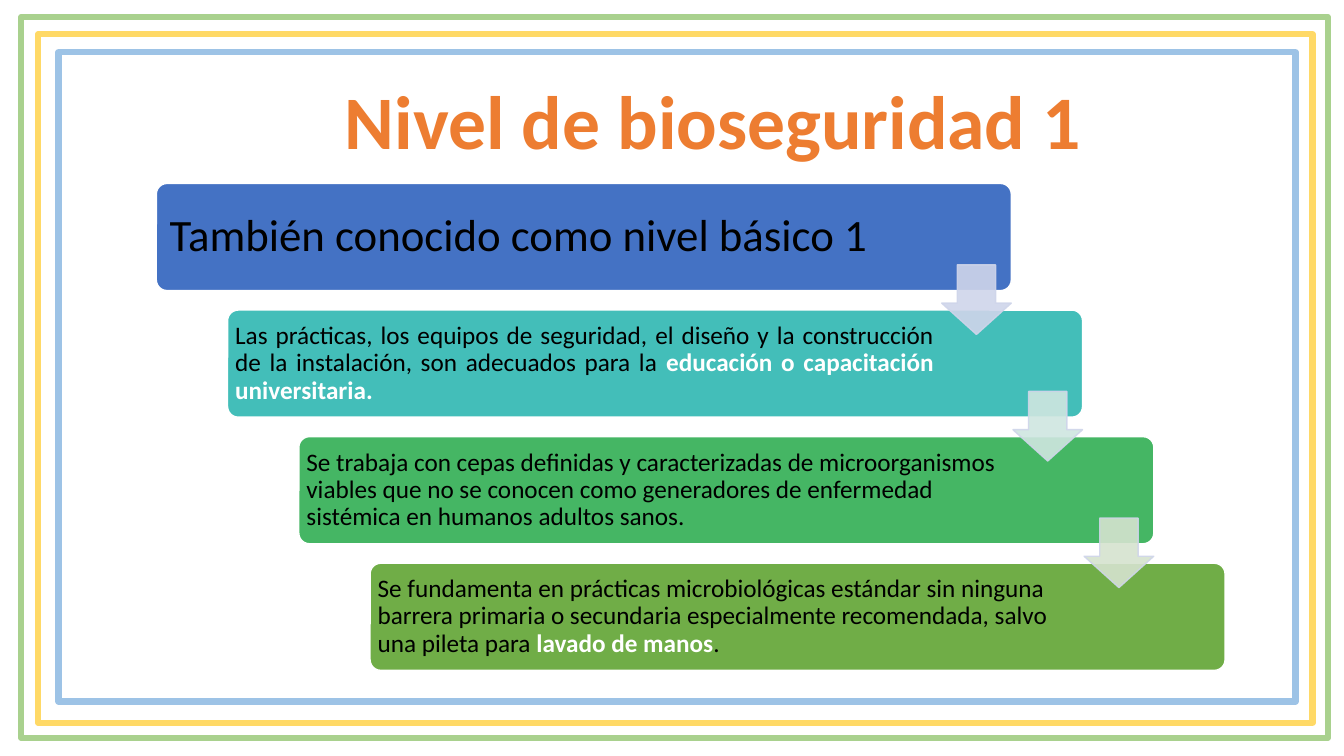
from lxml.etree import SubElement as Sub
from pptx import Presentation
from pptx.dml.color import RGBColor as Rgb
from pptx.enum.shapes import MSO_SHAPE as Kind
from pptx.enum.text import MSO_ANCHOR as Anchor, PP_ALIGN as Align
from pptx.oxml.ns import qn
from pptx.util import Inches, Pt

HUE = {
    "leaf": "A9D18E", "sun": "FFD966", "sky": "9DC3E6",
    "head": "ED7D31", "ink": "000000", "white": "FFFFFF",
    "blue": "4472C4", "teal": "43BEB9", "green": "45B664", "olive": "70AD47",
    "edge": "CFD5EA", "mist": "CFE6E0", "sage": "D5E3CF",
}

FRAMES = [
    ("leaf", (1.58, 2.27, 97.22, 95.33)),
    ("sun", (2.85, 4.53, 94.82, 91.07)),
    ("sky", (4.35, 6.93, 92.05, 85.87)),
]

STEPS = [
    ("blue", "edge", 32, 0.86, Align.LEFT,
     [("También conocido como nivel básico 1", "ink")]),
    ("teal", "mist", 18, 0.835, Align.JUSTIFY,
     [("Las prácticas, los equipos de seguridad, el diseño y la construcción "
       "de la instalación, son adecuados para la ", "ink"),
      ("educación o capacitación universitaria.", "white")]),
    ("green", "sage", 18, 0.835, Align.LEFT,
     [("Se trabaja con cepas definidas y caracterizadas de microorganismos "
       "viables que no se conocen como generadores de enfermedad "
       "sistémica en humanos adultos sanos.", "ink")]),
    ("olive", None, 18, 0.835, Align.LEFT,
     [("Se fundamenta en prácticas microbiológicas estándar sin ninguna "
       "barrera primaria o secundaria especialmente recomendada, salvo "
       "una pileta para ", "ink"),
      ("lavado de manos", "white"), (".", "ink")]),
]


def share(deck, box):
    wide, high = deck.slide_width, deck.slide_height
    return [int(part * full / 100) for part, full in zip(box, (wide, high) * 2)]


def write(frame, runs, size, bold=(), align=Align.LEFT,
          anchor=Anchor.MIDDLE, inset=0):
    frame.word_wrap = True
    frame.vertical_anchor = anchor
    frame.margin_left = frame.margin_right = Pt(inset)
    frame.margin_top = frame.margin_bottom = Pt(inset)
    para = frame.paragraphs[0]
    para.alignment, para.line_spacing = align, 0.9
    for text, hue in runs:
        run = para.add_run()
        run.text = text
        font = run.font
        font.name, font.size, font.bold = "Calibri", Pt(size), hue in bold
        font.color.rgb = Rgb.from_string(HUE[hue])


def draw(slide, kind, box, fill=None, line="white", width=1, adjust=()):
    shape = slide.shapes.add_shape(kind, *map(int, box))
    shape.shadow.inherit = False
    if fill:
        shape.fill.solid()
        shape.fill.fore_color.rgb = Rgb.from_string(HUE[fill])
    else:
        shape.fill.background()
    shape.line.color.rgb = Rgb.from_string(HUE[line])
    shape.line.width = Pt(width)
    for spot, value in enumerate(adjust):
        shape.adjustments[spot] = value
    return shape


def fade(shape, alpha):
    for color in shape.element.spPr.iter(qn("a:srgbClr")):
        Sub(color, qn("a:alpha"), val=str(alpha * 1000))


def border(deck, slide):
    for hue, box in FRAMES:
        draw(slide, Kind.RECTANGLE, share(deck, box), line=hue, width=4.5)


def heading(slide, box):
    title = slide.shapes.title
    title.left, title.top, title.width, title.height = box
    write(title.text_frame, [("Nivel de bioseguridad 1", "head")], 54,
          bold=("head",), align=Align.CENTER, anchor=Anchor.BOTTOM, inset=3.6)


def stairs(slide, box):
    left, top, width, height = box
    wide, high = width * 0.8, height * 0.22
    last = len(STEPS) - 1
    right, down = (width - wide) / last, (height - high) / last
    spots = [(left + i * right, top + i * down) for i in range(len(STEPS))]
    for (x, y), (fill, _, size, part, align, runs) in zip(spots, STEPS):
        draw(slide, Kind.ROUNDED_RECTANGLE, (x, y, wide, high), fill,
             adjust=(0.1,))
        label = slide.shapes.add_textbox(*map(int, (x, y, wide * part, high)))
        write(label.text_frame, runs, size, bold=("white",), align=align,
              inset=size * 0.3)
    side = high * 0.65
    for (x, y), (_, fill, *_) in zip(spots[:last], STEPS):
        arrow = draw(slide, Kind.DOWN_ARROW,
                     (x + wide - side, y + high * 0.76, side, side),
                     fill, "edge", adjust=(0.55, 0.45))
        fade(arrow, 90)


def main():
    deck = Presentation()
    deck.slide_width, deck.slide_height = Inches(13.33), Inches(7.5)
    slide = deck.slides.add_slide(deck.slide_layouts[5])
    border(deck, slide)
    heading(slide, share(deck, (19.73, 9.07, 66.69, 13.47)))
    stairs(slide, share(deck, (11.63, 24.27, 79.52, 64.4)))
    deck.save("out.pptx")


if __name__ == "__main__":
    main()
